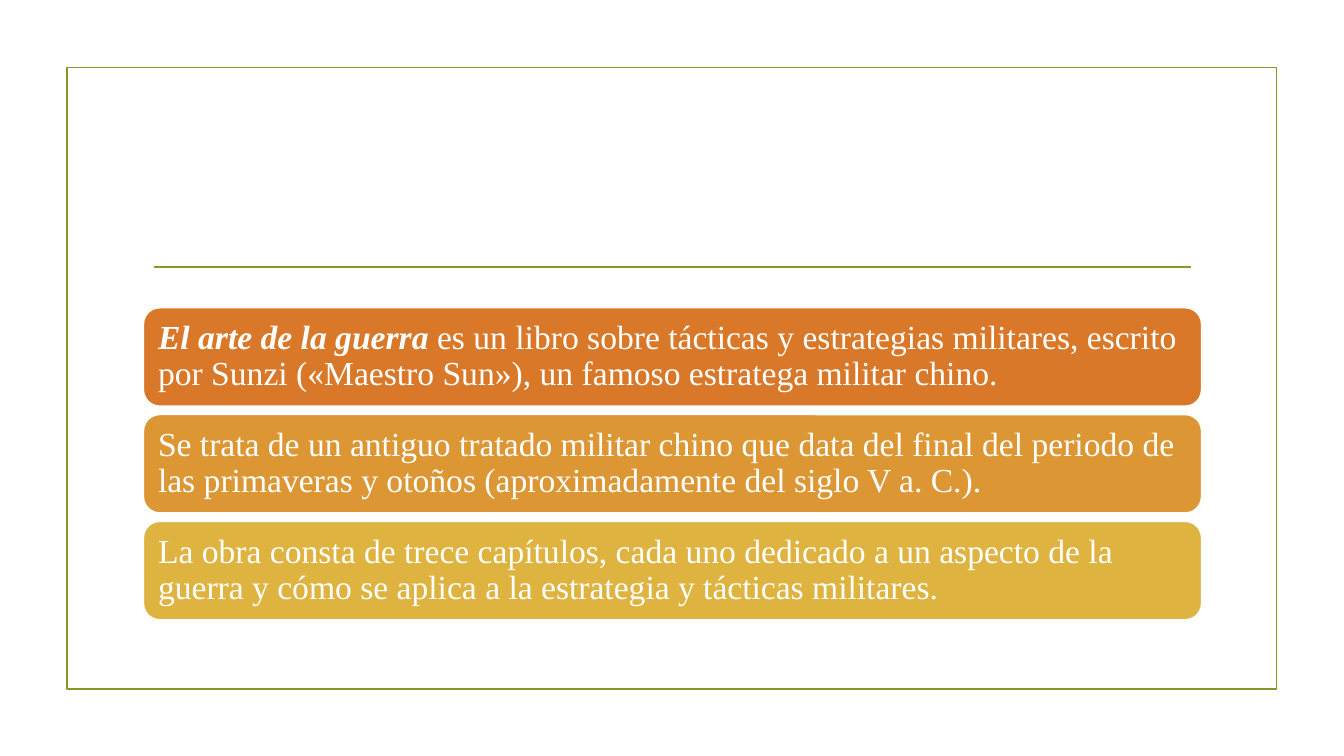
from dataclasses import dataclass

from lxml.etree import SubElement as add_element
from pptx import Presentation
from pptx.dml.color import RGBColor as Color
from pptx.enum.shapes import MSO_CONNECTOR as Connector
from pptx.enum.shapes import MSO_SHAPE as Shape
from pptx.enum.text import MSO_ANCHOR as Anchor
from pptx.enum.text import PP_ALIGN as Align
from pptx.oxml.ns import qn
from pptx.slide import Slide
from pptx.util import Pt

COLORS = {
    "olive": "83992A",
    "white": "FFFFFF",
    "orange": "D97828",
    "amber": "DC9734",
    "gold": "DEB340",
}
FONT = "Times New Roman"
LINE_WIDTH = 1.25
BAR_LEFT, BAR_TOP = 102.4, 219.7
BAR_WIDTH, BAR_HEIGHT = 756, 70.5
BAR_PITCH = 76.3


@dataclass
class Bar:
    color: str
    text: str
    title: str = ""


BARS = [
    Bar(
        "orange",
        " es un libro sobre tácticas y estrategias militares, escrito por Sunzi "
        "(«Maestro Sun»), un famoso estratega militar chino.",
        title="El arte de la guerra",
    ),
    Bar(
        "amber",
        "Se trata de un antiguo tratado militar chino que data del final del periodo "
        "de las primaveras y otoños (aproximadamente del siglo V a. C.).",
    ),
    Bar(
        "gold",
        "La obra consta de trece capítulos, cada uno dedicado a un aspecto de la "
        "guerra y cómo se aplica a la estrategia y tácticas militares.",
    ),
]


def color(name: str) -> Color:
    return Color.from_string(COLORS[name])


def draw_frame(page: Slide) -> None:
    frame = page.shapes.add_shape(Shape.RECTANGLE, Pt(47.8), Pt(48.2), Pt(864), Pt(444))
    frame.shadow.inherit = False
    frame.fill.background()
    frame.line.color.rgb = color("olive")
    frame.line.width = Pt(LINE_WIDTH)


def draw_title_rule(page: Slide) -> None:
    rule = page.shapes.add_connector(
        Connector.STRAIGHT, Pt(110.2), Pt(190.8), Pt(850.4), Pt(190.8)
    )
    rule.line.color.rgb = color("olive")
    rule.line.width = Pt(LINE_WIDTH)
    add_element(rule._element.spPr, qn("a:effectLst"))


def draw_bar(page: Slide, bar: Bar, top: float) -> None:
    box = page.shapes.add_shape(
        Shape.ROUNDED_RECTANGLE, Pt(BAR_LEFT), Pt(top), Pt(BAR_WIDTH), Pt(BAR_HEIGHT)
    )
    box.shadow.inherit = False
    box.fill.solid()
    box.fill.fore_color.rgb = color(bar.color)
    box.line.color.rgb = color("white")
    box.line.width = Pt(LINE_WIDTH)

    frame = box.text_frame
    frame.word_wrap = True
    frame.vertical_anchor = Anchor.MIDDLE
    frame.margin_left = frame.margin_right = Pt(7.2)
    frame.margin_top = frame.margin_bottom = Pt(7.2)

    para = frame.paragraphs[0]
    para.alignment = Align.LEFT
    para.line_spacing = 0.9
    if bar.title:
        title = para.add_run()
        title.text = bar.title
        title.font.bold = title.font.italic = True
    para.add_run().text = bar.text
    for span in para.runs:
        span.font.name = FONT
        span.font.size = Pt(24)
        span.font.color.rgb = color("white")


def main() -> None:
    deck = Presentation()
    deck.slide_width, deck.slide_height = Pt(960), Pt(540)
    page = deck.slides.add_slide(deck.slide_layouts[6])
    draw_frame(page)
    draw_title_rule(page)
    for index, bar in enumerate(BARS):
        draw_bar(page, bar, BAR_TOP + index * BAR_PITCH)
    deck.save("out.pptx")


if __name__ == "__main__":
    main()
